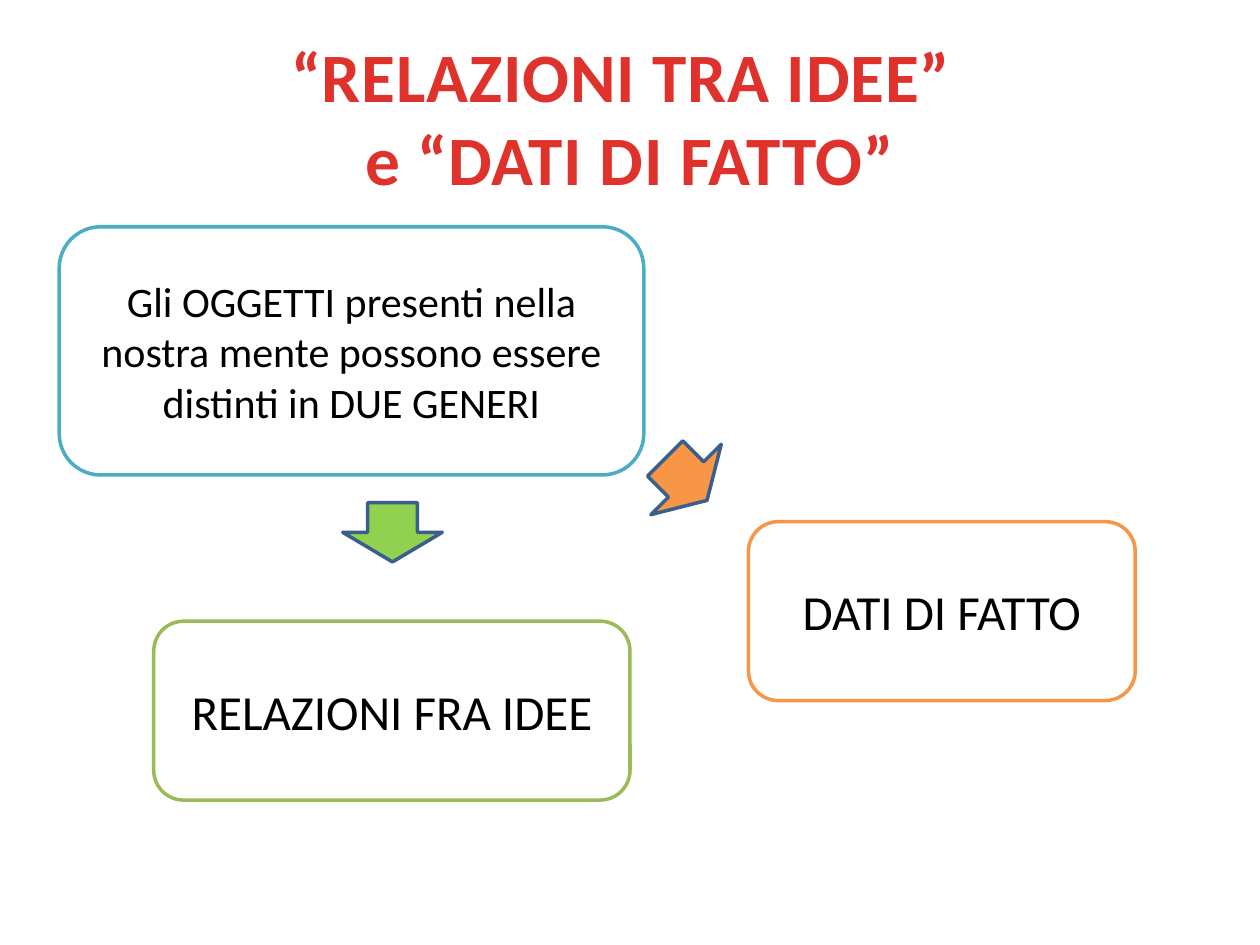
from pptx import Presentation
from pptx.dml.color import RGBColor as RGB
from pptx.enum.shapes import MSO_SHAPE as Shape
from pptx.enum.text import MSO_ANCHOR as Anchor, PP_ALIGN as Align
from pptx.util import Inches, Pt

THEME = {
    "font": "Calibri", "title": 39.6, "body": 24, "label": 28, "line": 2,
    "red": "E0322D", "ink": "000000", "paper": "FFFFFF", "edge": "3A5F8C",
    "blue": "4BACC6", "green": "9BBB59", "lime": "92D050", "orange": "F79646",
}
TITLE = ["“RELAZIONI TRA IDEE” ", "e “DATI DI FATTO”"]
BOXES = [
    ("Gli OGGETTI presenti nella nostra mente possono essere distinti in DUE GENERI",
     (0.47, 1.8, 4.64, 1.97), "blue", "body"),
    ("RELAZIONI FRA IDEE", (1.22, 4.93, 3.78, 1.42), "green", "label"),
    ("DATI DI FATTO", (5.94, 4.14, 3.07, 1.42), "orange", "label"),
]
ARROWS = [
    ((2.72, 3.99, 0.79, 0.47), "lime", 0),
    ((5.05, 3.57, 0.79, 0.47), "orange", 315),
]


def tint(name):
    return RGB.from_string(THEME[name])


def write(para, text, size, color, bold=False):
    run = para.add_run()
    run.text = text
    font = run.font
    font.name, font.size, font.bold = THEME["font"], Pt(THEME[size]), bold
    font.color.rgb = tint(color)
    return run


def draw(slide, kind, area, fill, line):
    shape = slide.shapes.add_shape(kind, *map(Inches, area))
    shape.shadow.inherit = False
    shape.fill.solid()
    shape.fill.fore_color.rgb = tint(fill)
    shape.line.color.rgb = tint(line)
    shape.line.width = Pt(THEME["line"])
    return shape


def center(shape):
    frame = shape.text_frame
    frame.word_wrap = True
    frame.vertical_anchor = Anchor.MIDDLE
    para = frame.paragraphs[0]
    para.alignment = Align.CENTER
    return para


def main():
    deck = Presentation()
    deck.slide_width, deck.slide_height = Inches(10), Inches(7.5)
    slide = deck.slides.add_slide(deck.slide_layouts[5])

    title = slide.shapes.title
    title.left, title.top = Inches(0.5), Inches(0.3)
    title.width, title.height = Inches(9), Inches(1.25)
    para = center(title)
    for i, text in enumerate(TITLE):
        if i:
            para.add_line_break()
        run = write(para, text, "title", "red", True)
        run.font._element.set("spc", "50")

    for text, area, line, size in BOXES:
        box = draw(slide, Shape.ROUNDED_RECTANGLE, area, "paper", line)
        write(center(box), text, size, "ink")

    for area, fill, turn in ARROWS:
        draw(slide, Shape.DOWN_ARROW, area, fill, "edge").rotation = turn

    deck.save("out.pptx")


if __name__ == "__main__":
    main()
